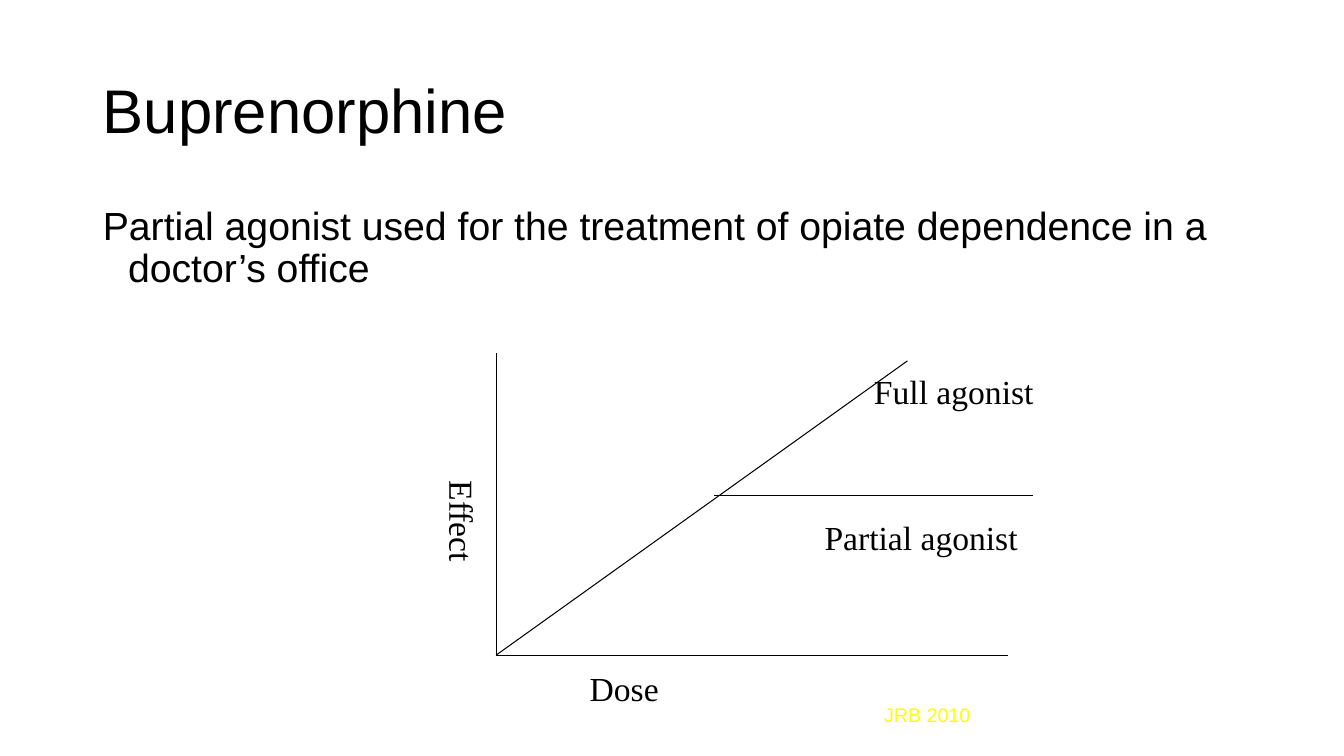
"""Build a slide comparing full and partial opioid agonists."""
from lxml import etree
from pptx import Presentation
from pptx.dml.color import RGBColor
from pptx.enum.shapes import MSO_CONNECTOR
from pptx.enum.text import MSO_ANCHOR, MSO_AUTO_SIZE, PP_ALIGN
from pptx.oxml.ns import qn
from pptx.util import Inches, Pt

STRAIGHT = MSO_CONNECTOR.STRAIGHT
MIDDLE, TOP = MSO_ANCHOR.MIDDLE, MSO_ANCHOR.TOP
NO_FIT = MSO_AUTO_SIZE.NONE
LEFT = PP_ALIGN.LEFT

COLORS = {"ink": "000000", "credit": "FFFF00"}
TITLE = "Buprenorphine"
BODY = "Partial agonist used for the treatment of opiate dependence in a doctor’s office"
ORIGIN = (4.92, 6.5)
LINES = [
    (ORIGIN, (ORIGIN[0], 3.5)),
    (ORIGIN, (10, ORIGIN[1])),
    (ORIGIN, (9, 3.58)),
    ((7.08, 4.92), (10.25, 4.92)),
]
SERIF = ("Times New Roman", 24, "ink")
LABELS = [
    ("Dose", (5.75, 6.58, 4.33, 0.5), SERIF, "horz"),
    ("Effect", (4.23, 4.67, 0.61, 1.42), SERIF, "eaVert"),
    ("Full agonist", (8.57, 3.63, 2.1, 0.5), SERIF, "horz"),
    ("Partial agonist", (8.08, 5.08, 2.58, 0.5), SERIF, "horz"),
    ("JRB 2010", (8.67, 6.92, 1.75, 0.34), ("Arial", 14, "credit"), "horz"),
]


def write(box, text, style, anchor=TOP):
    """Put one styled, left-aligned paragraph in a box and return it."""
    frame = box.text_frame
    frame.text = text
    frame.word_wrap = True
    frame.auto_size = NO_FIT
    frame.vertical_anchor = anchor
    para = frame.paragraphs[0]
    para.alignment = LEFT
    name, size, color = style
    para.font.name = name
    para.font.size = Pt(size)
    para.font.color.rgb = RGBColor.from_string(COLORS[color])
    return para


def place(box, area):
    """Move a box to an area given in inches."""
    box.left, box.top, box.width, box.height = map(Inches, area)


def add_line(page, start, end):
    """Draw a thin line without a shadow."""
    line = page.shapes.add_connector(STRAIGHT, *map(Inches, start + end))
    line.line.color.rgb = RGBColor.from_string(COLORS["ink"])
    line.line.width = Pt(0.75)
    etree.SubElement(line._element.spPr, qn("a:effectLst"))


def main():
    """Build and save the deck."""
    deck = Presentation()
    deck.slide_width, deck.slide_height = Inches(13.33), Inches(7.5)
    page = deck.slides.add_slide(deck.slide_layouts[1])

    title, body = page.shapes.title, page.placeholders[1]
    place(title, (0.92, 0.4, 11.5, 1.45))
    write(title, TITLE, ("Arial", 44, "ink"), MIDDLE).line_spacing = 0.9

    place(body, (0.92, 2, 11.5, 4.76))
    para = write(body, BODY, ("Arial", 28, "ink"))
    para.line_spacing = 0.9
    para.space_before = Pt(10)
    properties = para._p.get_or_add_pPr()
    properties.set("marL", str(Inches(0.25)))
    properties.set("indent", str(-Inches(0.25)))
    etree.SubElement(properties, qn("a:buNone"))

    for start, end in LINES:
        add_line(page, start, end)

    for text, area, style, direction in LABELS:
        box = page.shapes.add_textbox(*map(Inches, area))
        write(box, text, style)
        box.text_frame._txBody.bodyPr.set("vert", direction)

    deck.save("out.pptx")


if __name__ == "__main__":
    main()
